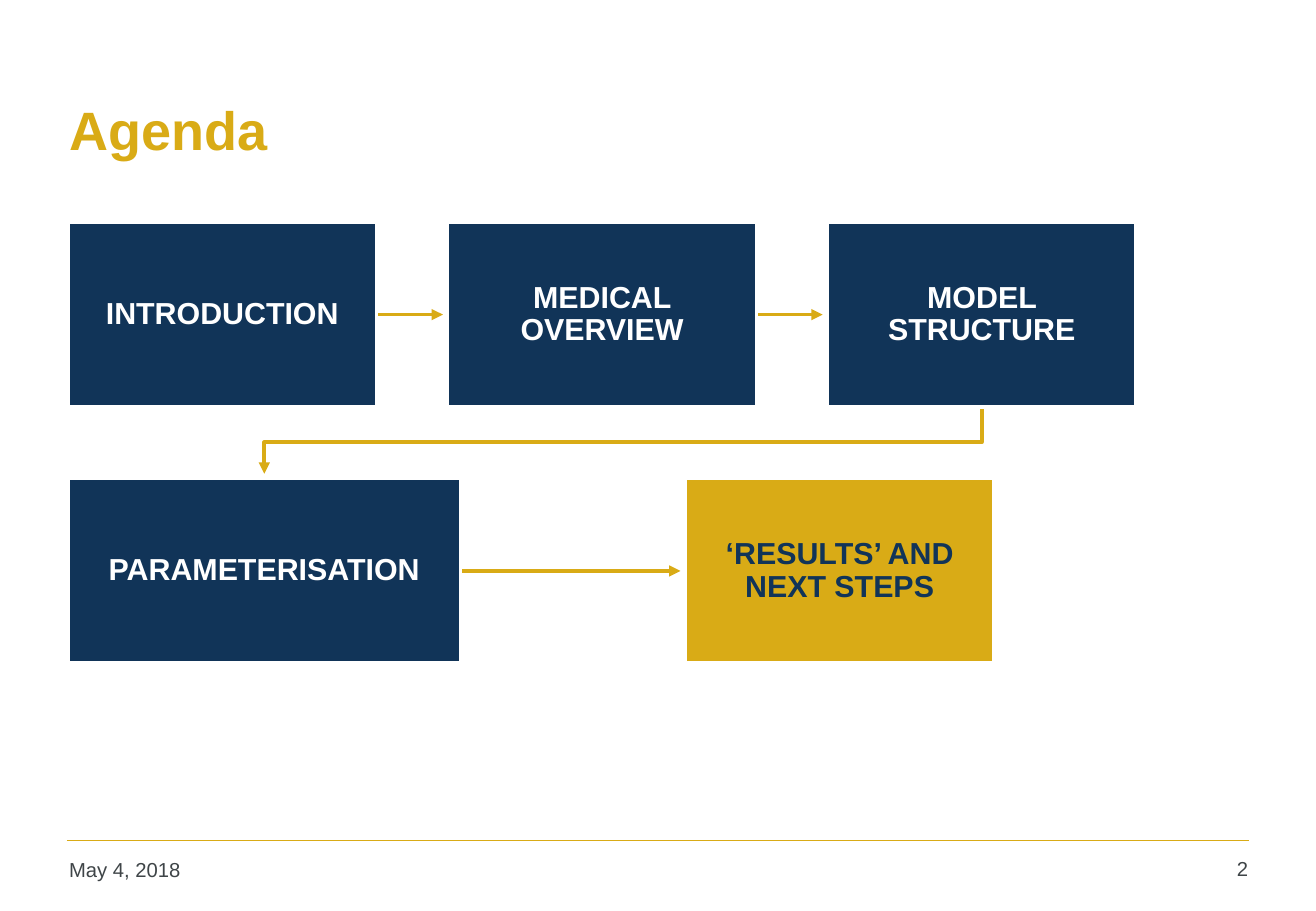
from lxml.etree import SubElement as Sub
from pptx import Presentation
from pptx.dml.color import RGBColor as Rgb
from pptx.enum.shapes import MSO_CONNECTOR as Conn, MSO_SHAPE as Shape
from pptx.enum.text import MSO_ANCHOR as Anchor, MSO_AUTO_SIZE as Auto, PP_ALIGN as Align
from pptx.oxml.ns import qn
from pptx.util import Inches, Pt

HUES = {"navy": "113458", "gold": "D9AB16", "white": "FFFFFF", "grey": "3F4548"}
WIDE, TALL, GAP = 2.54, 1.52, 0.04
LEFT, STEP = 0.56, 3.125
TOP, LOW = 1.83, 3.94


class Deck:
    """Holds the style and the current slide, and draws each kind of element."""

    def __init__(self, wide, tall):
        self.prs = Presentation()
        self.prs.slide_width, self.prs.slide_height = Inches(wide), Inches(tall)
        self.font = "Arial"
        self.slide = self.prs.slides.add_slide(self.prs.slide_layouts[5])

    def hue(self, name):
        return Rgb.from_string(HUES[name])

    def letter(self, shape, text, size, hue, bold=False, align=Align.LEFT, anchor=Anchor.TOP):
        frame = shape.text_frame
        frame.text = text
        frame.word_wrap, frame.auto_size = True, Auto.NONE
        frame.vertical_anchor = anchor
        para = frame.paragraphs[0]
        para.alignment = align
        font = para.runs[0].font
        font.name, font.size, font.bold = self.font, Pt(size), bold
        font.color.rgb = self.hue(hue)
        return frame

    def title(self, text, left, top, wide, tall):
        head = self.slide.shapes.title
        head.left, head.top = Inches(left), Inches(top)
        head.width, head.height = Inches(wide), Inches(tall)
        self.letter(head, text, 32, "gold", True, anchor=Anchor.MIDDLE)

    def label(self, text, left, top, wide, align=Align.LEFT):
        note = self.slide.shapes.add_textbox(
            Inches(left), Inches(top), Inches(wide), Inches(0.36))
        self.letter(note, text, 12, "grey", align=align)

    def box(self, text, left, top, wide=WIDE, fill="navy", ink="white"):
        rect = self.slide.shapes.add_shape(
            Shape.RECTANGLE, Inches(left), Inches(top), Inches(wide), Inches(TALL))
        rect.shadow.inherit = False
        rect.fill.solid()
        rect.fill.fore_color.rgb = self.hue(fill)
        self.stroke(rect, "white", 2)
        frame = self.letter(rect, text, 18, ink, True, Align.CENTER, Anchor.MIDDLE)
        frame.margin_left = frame.margin_right = Inches(0.14)
        frame.margin_top = frame.margin_bottom = Inches(0.14)
        frame.paragraphs[0].line_spacing = 0.9
        return rect

    def stroke(self, shape, hue, width):
        shape.line.color.rgb = self.hue(hue)
        shape.line.width = Pt(width)

    def tip(self, shape):
        Sub(shape.element.spPr.get_or_add_ln(), qn("a:tailEnd"), type="triangle")

    def rule(self, start, end, width):
        line = self.slide.shapes.add_connector(
            Conn.STRAIGHT, *(Inches(n) for n in (*start, *end)))
        self.stroke(line, "gold", width)
        Sub(line.element.spPr, qn("a:effectLst"))
        return line

    def arrow(self, box, end):
        line = self.rule(end, end, 2.25)
        line.begin_connect(box, 3)
        self.tip(line)
        box.element.addprevious(line.element)

    def bend(self, box, points):
        first, *rest = [(Inches(x), Inches(y)) for x, y in points]
        build = self.slide.shapes.build_freeform(*first)
        build.add_line_segments(rest, close=False)
        line = build.convert_to_shape()
        line.shadow.inherit = False
        line.fill.background()
        self.stroke(line, "gold", 2.25)
        self.tip(line)
        box.element.addprevious(line.element)


def main():
    deck = Deck(10.83, 7.5)
    deck.rule((0.55, 6.92), (10.28, 6.92), 1)
    deck.title("Agenda", 0.47, 0.44, 9.82, 1.25)
    deck.label("May 4, 2018", 0.47, 7.01, 2.39)
    deck.label("2", 9.6, 7, 0.77, Align.RIGHT)

    names = ["INTRODUCTION", "MEDICAL OVERVIEW", "MODEL STRUCTURE"]
    row = [deck.box(name, LEFT + i * STEP, TOP) for i, name in enumerate(names)]
    for i, box in enumerate(row[:-1], 1):
        deck.arrow(box, (LEFT + i * STEP - GAP, TOP + TALL / 2))

    wide, last = 3.23, 5.64
    param = deck.box("PARAMETERISATION", LEFT, LOW, wide)
    deck.box("‘RESULTS’ AND NEXT STEPS", last, LOW, fill="gold", ink="navy")
    deck.arrow(param, (last - GAP, LOW + TALL / 2))

    start, end = LEFT + 2 * STEP + WIDE / 2, LEFT + wide / 2
    base, turn = TOP + TALL, 3.64
    deck.bend(row[-1], [(start, base), (start, turn), (end, turn), (end, LOW - GAP)])
    deck.prs.save("out.pptx")


if __name__ == "__main__":
    main()
